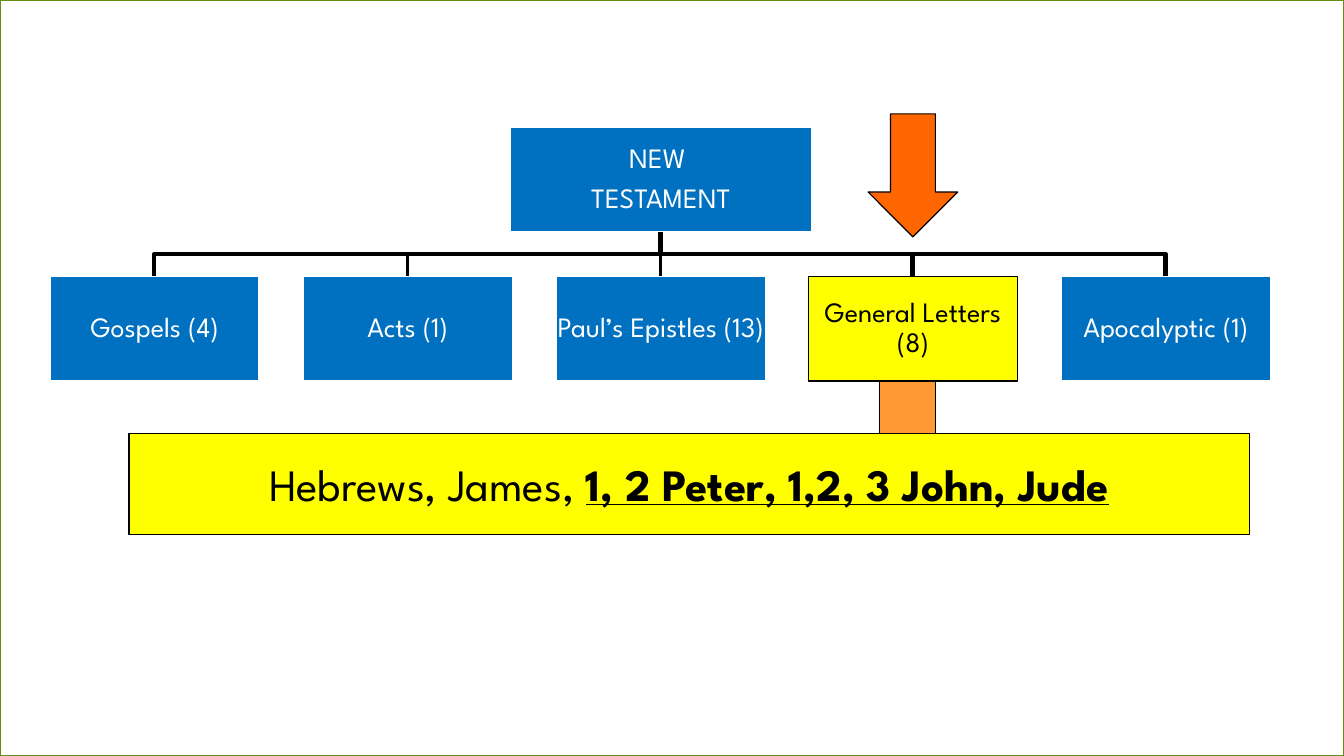
from dataclasses import dataclass

from lxml import etree
from pptx import Presentation
from pptx import util as u
from pptx.dml.color import RGBColor
from pptx.enum import shapes, text
from pptx.oxml.ns import qn

PX = 9144  # EMU in one px, 100 px to the inch


@dataclass(frozen=True)
class Theme:
    font: str = "League Spartan"
    white: str = "FFFFFF"
    black: str = "000000"
    green: str = "658E15"
    blue: str = "0070C0"
    yellow: str = "FFFF00"
    amber: str = "FF9933"
    orange: str = "FF6600"
    label_size: int = 20
    books_size: int = 32
    outline: float = 0.85
    thick: float = 3
    thin: float = 2.25


THEME = Theme()
SECTIONS = ["Gospels (4)", "Acts (1)", "Paul’s Epistles (13)",
            "General Letters (8)", "Apocalyptic (1)"]
CURRENT = 3  # index of the highlighted section


def add_box(page, place, fill, line, kind=shapes.MSO_SHAPE.RECTANGLE):
    box = page.shapes.add_shape(kind, *(v * PX for v in place))
    box.shadow.inherit = False
    box.fill.solid()
    box.fill.fore_color.rgb = RGBColor.from_string(fill)
    box.line.color.rgb = RGBColor.from_string(line)
    box.line.width = u.Pt(THEME.outline)
    return box


def write(box, paras, *, size, color, inset=None, line_spacing=None, after=None):
    """Each paragraph is a list of (words, emphasised) spans."""
    frame = box.text_frame
    frame.word_wrap = True
    frame.vertical_anchor = text.MSO_ANCHOR.MIDDLE
    if inset is not None:
        frame.margin_left = frame.margin_right = inset * PX
        frame.margin_top = frame.margin_bottom = inset * PX
    for index, spans in enumerate(paras):
        para = frame.add_paragraph() if index else frame.paragraphs[0]
        para.alignment = text.PP_ALIGN.CENTER
        para.line_spacing = line_spacing
        para.space_after = after
        for words, emphasised in spans:
            span = para.add_run()
            span.text = words
            span.font.name = THEME.font
            span.font.size = u.Pt(size)
            span.font.color.rgb = RGBColor.from_string(color)
            if emphasised:
                span.font.bold = span.font.underline = True


def add_node(page, place, lines, current=False):
    fill, ink, line = ((THEME.yellow, THEME.black, THEME.black) if current
                       else (THEME.blue, THEME.white, THEME.white))
    write(add_box(page, place, fill, line), [[(words, False)] for words in lines],
          size=THEME.label_size, color=ink, inset=1, line_spacing=0.9, after=u.Pt(7))


def add_branch(page, start, end, weight):
    (x1, y1), (x2, y2) = start, end
    if x1 == x2:
        branch = page.shapes.add_connector(
            shapes.MSO_CONNECTOR.STRAIGHT, *(v * PX for v in (x1, y1, x2, y2)))
        etree.SubElement(branch.element.spPr, qn("a:effectLst"))
    else:
        middle = (y1 + y2) // 2
        outline = page.shapes.build_freeform(x1 * PX, y1 * PX)
        outline.add_line_segments(
            [(x * PX, y * PX) for x, y in ((x1, middle), (x2, middle), (x2, y2))],
            close=False)
        branch = outline.convert_to_shape()
        branch.shadow.inherit = False
        branch.fill.background()
    branch.line.color.rgb = RGBColor.from_string(THEME.black)
    branch.line.width = u.Pt(weight)


def add_tree(page, left, top, width, height):
    """Root above a row of evenly spaced sections."""
    root_width, node_width, node_height = 299, 207, 104
    center = left + width // 2
    row_top = top + height - node_height
    step = (width - node_width) / (len(SECTIONS) - 1)
    lefts = [left + round(step * i) for i in range(len(SECTIONS))]
    weights = [THEME.thick, THEME.thin, THEME.thin, THEME.thick, THEME.thick]

    # Branches lie behind the boxes
    for node_left, weight in reversed(list(zip(lefts, weights))):
        add_branch(page, (center, top + node_height),
                   (node_left + node_width // 2, row_top), weight)

    # Root and sections
    add_node(page, (center - root_width // 2, top, root_width, node_height),
             ["NEW ", "TESTAMENT"])
    for index, (node_left, label) in enumerate(zip(lefts, SECTIONS)):
        add_node(page, (node_left, row_top, node_width, node_height), [label],
                 current=index == CURRENT)


def add_books(page, place):
    box = add_box(page, place, THEME.yellow, THEME.black)
    write(box, [[("Hebrews, James, ", False), ("1, 2 Peter, 1,2, 3 John, Jude", True)]],
          size=THEME.books_size, color=THEME.black)


def main():
    deck = Presentation()
    deck.slide_width, deck.slide_height = 1333 * PX, 750 * PX
    page = deck.slides.add_slide(deck.slide_layouts[6])

    # Framed white ground
    add_box(page, (0, 0, 1333, 750), THEME.white, THEME.green)
    # Link from the current section to its books
    add_box(page, (872, 354, 56, 111), THEME.amber, THEME.black)
    # Tree of sections
    add_tree(page, 50, 126, 1210, 252)
    # Pointer to the current section
    add_box(page, (861, 113, 89, 122), THEME.orange, THEME.black,
            shapes.MSO_SHAPE.DOWN_ARROW)
    # Books of the current section
    add_books(page, (128, 430, 1111, 100))

    deck.save("out.pptx")


if __name__ == "__main__":
    main()
